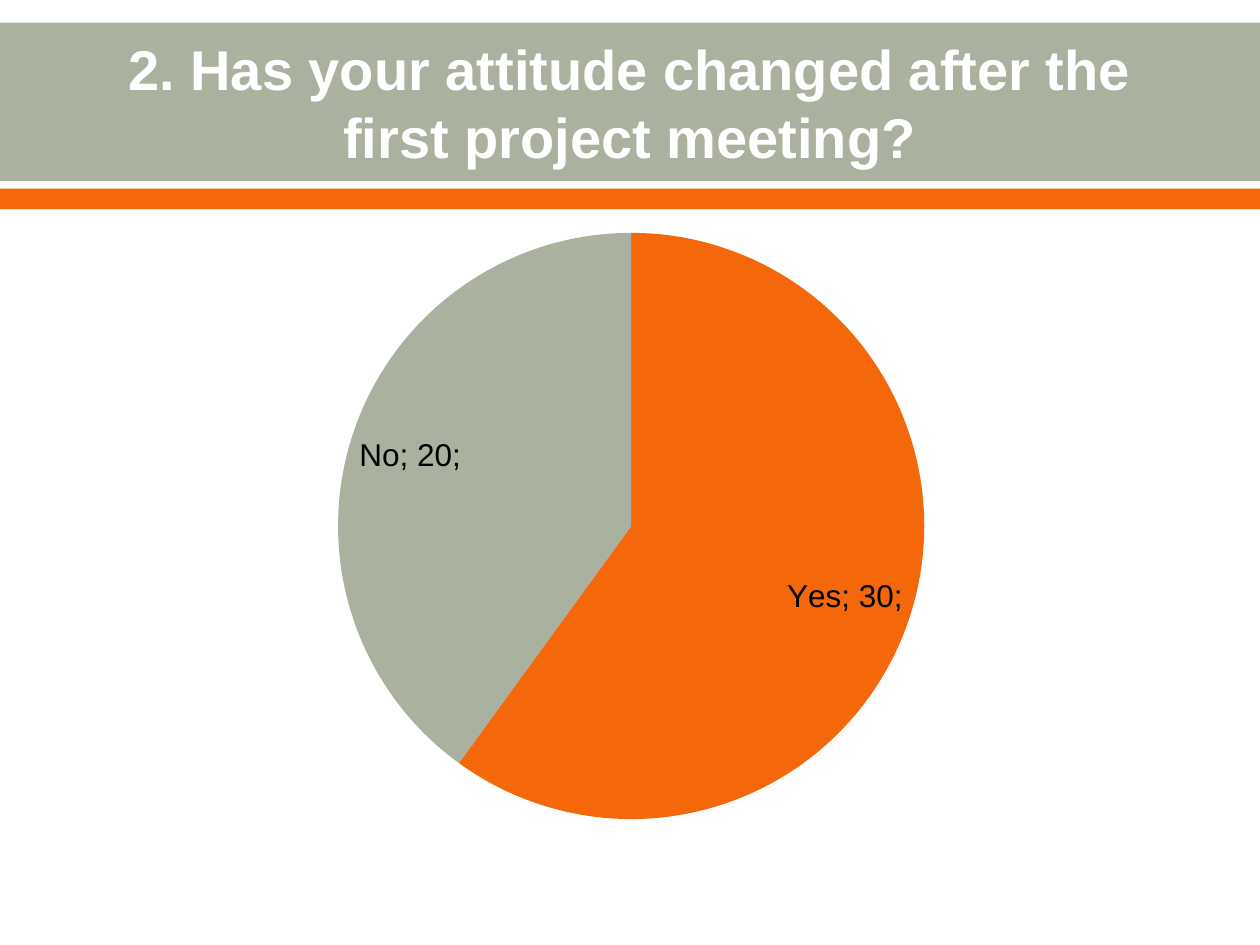
from lxml.etree import fromstring
from pptx import Presentation
from pptx.chart.data import CategoryChartData
from pptx.dml.color import RGBColor
from pptx.enum.chart import XL_CHART_TYPE, XL_LABEL_POSITION
from pptx.enum.shapes import MSO_SHAPE
from pptx.enum.text import MSO_ANCHOR, PP_ALIGN
from pptx.util import Inches, Pt

FONT = "Arial"
COLOURS = {"sage": "ABB19F", "orange": "F4680B", "white": "FFFFFF", "black": "000000"}
ANSWERS = {"Yes": (30, "orange"), "No": (20, "sage")}
CHART_NS = "http://schemas.openxmlformats.org/drawingml/2006/chart"


def colour(name):
    return RGBColor.from_string(COLOURS[name])


def inches(box):
    return [Inches(length) for length in box]


def style_font(font, size, name, bold=False):
    font.name, font.size, font.bold = FONT, Pt(size), bold
    font.color.rgb = colour(name)


def add_bar(page, box, fill):
    bar = page.shapes.add_shape(MSO_SHAPE.RECTANGLE, *inches(box))
    bar.shadow.inherit = False
    bar.fill.solid()
    bar.fill.fore_color.rgb = colour(fill)
    bar.line.fill.background()


def add_header(page, box, title):
    """Title band with a thin accent stripe below it."""
    left, top, width, height = box
    add_bar(page, (left, top, width, height * 0.85), "sage")
    add_bar(page, (left, top + height * 0.89, width, height * 0.11), "orange")

    margin = width * 0.05
    title_box = (left + margin, top + 0.02, width - 2 * margin, height * 0.825)
    frame = page.shapes.add_textbox(*inches(title_box)).text_frame
    frame.word_wrap = True
    frame.vertical_anchor = MSO_ANCHOR.MIDDLE
    para = frame.paragraphs[0]
    para.text = title
    para.alignment = PP_ALIGN.CENTER
    style_font(para.font, 32, "white", bold=True)


def set_plot_layout(chart, **shares):
    """Fix the plot area, given as shares of the chart's box."""
    lengths = "".join(f'<c:{key} val="{share}"/>' for key, share in shares.items())
    layout = fromstring(
        f'<c:layout xmlns:c="{CHART_NS}"><c:manualLayout><c:layoutTarget val="inner"/>'
        f'<c:xMode val="edge"/><c:yMode val="edge"/>{lengths}'
        "</c:manualLayout></c:layout>")
    plot_area = chart._chartSpace.chart.plotArea
    for old in plot_area.findall(f"{{{CHART_NS}}}layout"):
        plot_area.remove(old)
    plot_area.insert(0, layout)


def add_answer_pie(page, box):
    data = CategoryChartData()
    data.categories = list(ANSWERS)
    data.add_series("Series 1", [count for count, _ in ANSWERS.values()])
    chart = page.shapes.add_chart(XL_CHART_TYPE.PIE, *inches(box), data).chart
    chart.has_title = False
    chart.has_legend = False
    style_font(chart.font, 18, "black")
    set_plot_layout(chart, x=0.24, y=0.03, w=0.52, h=0.94)

    plot = chart.plots[0]
    plot.vary_by_categories = True
    for index, (_, fill) in enumerate(ANSWERS.values()):
        slice_format = plot.series[0].points[index].format
        slice_format.fill.solid()
        slice_format.fill.fore_color.rgb = colour(fill)
        slice_format.line.fill.background()

    plot.has_data_labels = True
    labels = plot.data_labels
    labels.show_category_name = True
    labels.show_value = True
    labels.number_format = '0";"'
    labels.number_format_is_linked = False
    labels.position = XL_LABEL_POSITION.INSIDE_END
    style_font(labels.font, 18, "black")
    separator = fromstring(f'<c:separator xmlns:c="{CHART_NS}">; </c:separator>')
    labels._element.find(f"{{{CHART_NS}}}showBubbleSize").addnext(separator)


def main():
    deck = Presentation()
    deck.slide_width, deck.slide_height = Inches(10), Inches(7.5)
    page = deck.slides.add_slide(deck.slide_layouts[6])
    add_header(page, (0, 0.18, 10, 1.48),
               "2. Has your attitude changed after the first project meeting?")
    add_answer_pie(page, (0.51, 1.7, 9, 4.95))
    deck.save("out.pptx")


if __name__ == "__main__":
    main()
